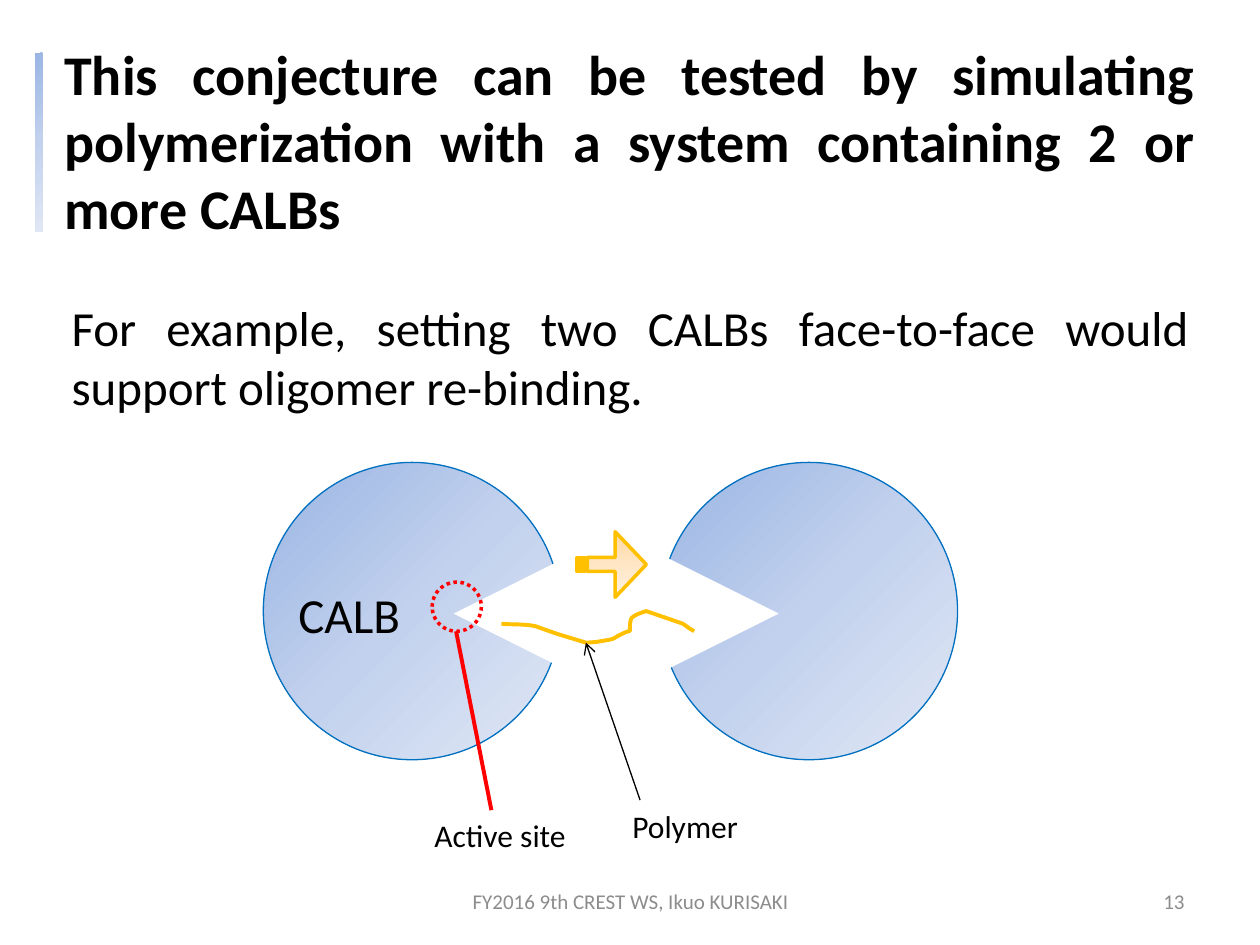
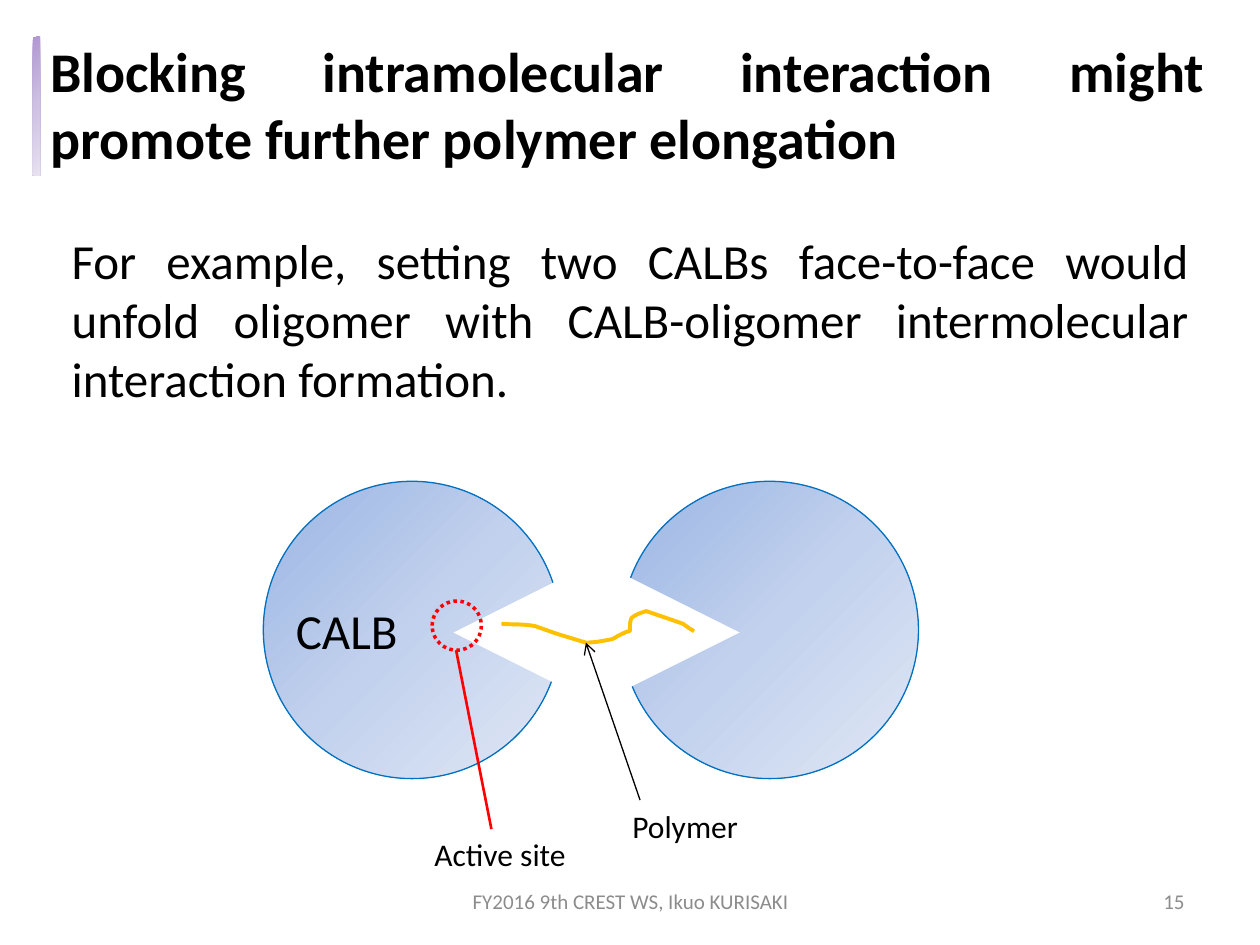
import copy
import pptx
import pptx.util
import pptx.dml.color
import pptx.enum.dml
import pptx.enum.shapes
import pptx.enum.text
import pptx.oxml.ns
from lxml import etree

Inches = pptx.util.Inches
Shape = pptx.enum.shapes.MSO_SHAPE
Align = pptx.enum.text.PP_ALIGN
Anchor = pptx.enum.text.MSO_ANCHOR
Color = pptx.dml.color.RGBColor.from_string
qn = pptx.oxml.ns.qn

hues = {
    "ink": "000000", "gray": "8C8C8C", "white": "FFFFFF",
    "edge": "0070C0", "site": "FF0000", "chain": "FFC000",
    "blue": ["9AB5E4", "C2D1ED", "E1E8F5"],
    "plum": ["B197D2", "CEC1E2", "E7E1F0"],
    "gold": ["FFD8A0", "FFE6C5", "FFF2E3"],
}
font = "Calibri"
foot = "FY2016 9th CREST WS, Ikuo KURISAKI"

pages = [
    {"title": "This conjecture can be tested by simulating polymerization with a system containing 2 or more CALBs",
     "head": (0.41, 0.26, 9.18, 1.72), "bar": (0.28, 0.42, 0.06, 1.42), "tint": "blue",
     "body": "For example, setting two CALBs face-to-face would support oligomer re-binding.",
     "place": (0.47, 2.31, 9.06, 1.04), "top": 3.67, "right": 5.24,
     "calb": (2.27, 4.59, 1.02, 0.57), "width": 2.25, "arrow": True, "number": "13"},
    {"title": "Blocking intramolecular interaction might promote further polymer elongation",
     "head": (0.3, 0.24, 9.37, 1.18), "bar": (0.26, 0.29, 0.06, 1.1), "tint": "plum",
     "body": "For example, setting two CALBs face-to-face would unfold oligomer with CALB-oligomer intermolecular interaction formation.",
     "place": (0.47, 1.78, 9.06, 1.51), "top": 3.82, "right": 4.93,
     "calb": (2.25, 4.72, 1.02, 0.57), "width": 1.5, "arrow": False, "number": "15"},
]

curves = [
    [(3.98, 4.95), (4.07, 4.96), (4.16, 4.95), (4.25, 4.97)],
    [(4.25, 4.97), (4.25, 4.97), (4.39, 5.02), (4.42, 5.03)],
    [(4.65, 5.1), (4.71, 5.1), (4.77, 5.09), (4.82, 5.08)],
    [(4.82, 5.08), (4.89, 5.07), (4.87, 5.06), (4.94, 5.03)],
    [(4.94, 5.03), (4.96, 5.02), (4.98, 5.01), (5, 5.01)],
    [(5, 5.01), (5, 4.97), (5, 4.94), (5.01, 4.91)],
    [(5.01, 4.91), (5.03, 4.88), (5.1, 4.86), (5.13, 4.85)],
    [(5.42, 4.95), (5.49, 5), (5.46, 4.98), (5.51, 5.01)],
]
steps = 8
chain = []
for curve in curves:
    for step in range(steps + 1):
        t = step / steps
        parts = [(1 - t) ** 3, 3 * t * (1 - t) ** 2, 3 * t ** 2 * (1 - t), t ** 3]
        chain.append([Inches(sum(w * p[axis] for w, p in zip(parts, curve))) for axis in (0, 1)])


def style(shape, fill=None, line=None, width=0.75, angle=45):
    shape.shadow.inherit = False
    if isinstance(fill, list):
        shape.fill.gradient()
        stops = shape.element.spPr.find(".//" + qn("a:gsLst"))
        stops.insert(1, copy.deepcopy(stops[0]))
        for stop, place, hue in zip(shape.fill.gradient_stops, (0, 0.5, 1), fill):
            stop.position = place
            stop.color.rgb = Color(hue)
        shape.fill.gradient_angle = 360 - angle
    elif fill:
        shape.fill.solid()
        shape.fill.fore_color.rgb = Color(fill)
    else:
        shape.fill.background()
    if line:
        shape.line.color.rgb = Color(line)
        shape.line.width = pptx.util.Pt(width)
    else:
        shape.line.fill.background()


def write(box, text, size, align=Align.LEFT, hue="ink", bold=False, wrap=True, anchor=Anchor.TOP):
    frame = box.text_frame
    frame.text = text
    frame.word_wrap = wrap
    frame.auto_size = pptx.enum.text.MSO_AUTO_SIZE.NONE
    frame.vertical_anchor = anchor
    para = frame.paragraphs[0]
    para.alignment = align
    para.font.name = font
    para.font.size = pptx.util.Pt(size)
    para.font.bold = bold
    para.font.color.rgb = Color(hues[hue])


deck = pptx.Presentation()
deck.slide_width = Inches(10)
deck.slide_height = Inches(7.5)

for page in pages:
    slide = deck.slides.add_slide(deck.slide_layouts[5])
    shapes = slide.shapes
    top = page["top"]
    right = page["right"]

    title = shapes.title
    title.left, title.top, title.width, title.height = map(Inches, page["head"])
    write(title, page["title"], 32, Align.JUSTIFY, bold=True)

    for left, notch, turn in ((2.09, 3.6, 270), (right, right - 0.06, 90)):
        disc = shapes.add_shape(Shape.OVAL, *map(Inches, (left, top, 2.36, 2.36)))
        style(disc, hues["blue"], hues["edge"])
        mouth = shapes.add_shape(Shape.ISOSCELES_TRIANGLE, *map(Inches, (notch, top + 0.7, 1, 1)))
        mouth.rotation = turn
        style(mouth, hues["white"])

    ring = shapes.add_shape(Shape.OVAL, *map(Inches, (3.43, top + 0.95, 0.39, 0.39)))
    style(ring, None, hues["site"], 2)
    ring.line.dash_style = pptx.enum.dml.MSO_LINE.ROUND_DOT

    bar = shapes.add_shape(Shape.RECTANGLE, *map(Inches, page["bar"]))
    style(bar, hues[page["tint"]])

    path = shapes.build_freeform(*chain[0], scale=1.0)
    path.add_line_segments(chain[1:], close=False)
    style(path.convert_to_shape(), None, hues["chain"], 2.25)

    for ends, hue, width, tip in (
        ((3.9, top + 2.76, 3.62, top + 1.34), "site", page["width"], False),
        ((5.08, 6.35, 4.65, 5.1), "ink", 0.75, True),
    ):
        link = shapes.add_connector(pptx.enum.shapes.MSO_CONNECTOR.STRAIGHT, *map(Inches, ends))
        link.line.color.rgb = Color(hues[hue])
        link.line.width = pptx.util.Pt(width)
        props = link.element.spPr
        if tip:
            etree.SubElement(props.find(qn("a:ln")), qn("a:tailEnd"), type="arrow")
        etree.SubElement(props, qn("a:effectLst"))

    if page["arrow"]:
        arrow = shapes.add_shape(Shape.STRIPED_RIGHT_ARROW, *map(Inches, (4.58, 4.22, 0.55, 0.52)))
        arrow.adjustments[0] = 0.213
        arrow.adjustments[1] = 0.476
        style(arrow, hues["gold"], hues["chain"], 2, 90)

    body = shapes.add_textbox(*map(Inches, page["place"]))
    write(body, page["body"], 28, Align.JUSTIFY)

    for text, place, size in (
        ("CALB", page["calb"], 28),
        ("Active site", (3.35, top + 2.76, 1.26, 0.4), 18),
        ("Polymer", (4.92, 6.36, 1.05, 0.4), 18),
    ):
        write(shapes.add_textbox(*map(Inches, place)), text, size, wrap=False)

    for text, left, width, align in (
        (foot, 3.42, 3.17, Align.CENTER),
        (page["number"], 7.17, 2.33, Align.RIGHT),
    ):
        box = shapes.add_textbox(*map(Inches, (left, 6.95, width, 0.4)))
        write(box, text, 12, align, "gray", anchor=Anchor.MIDDLE)

deck.save("out.pptx")
